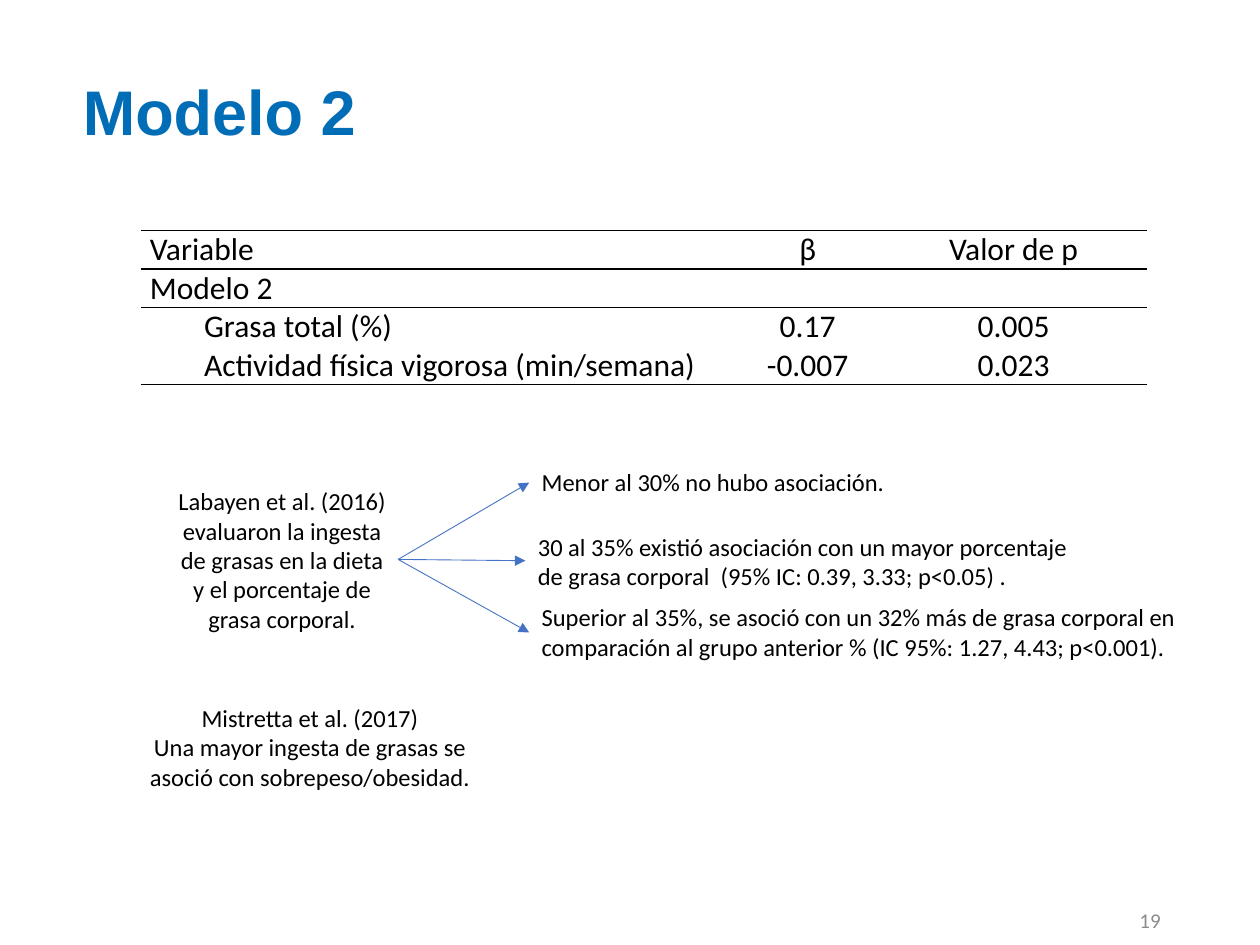
from dataclasses import dataclass, field

import lxml.etree
import pptx
import pptx.dml.color
import pptx.enum.shapes
import pptx.enum.text
import pptx.oxml
import pptx.oxml.ns
import pptx.util

RGB = pptx.dml.color.RGBColor
BLUE = RGB(0x00, 0x6D, 0xB6)
LINE = RGB(0x44, 0x72, 0xC4)
GREY = RGB(0x8C, 0x8C, 0x8C)
BLACK = RGB(0, 0, 0)

ALIGN = pptx.enum.text.PP_ALIGN
MIDDLE = pptx.enum.text.MSO_ANCHOR.MIDDLE
TOP = pptx.enum.text.MSO_ANCHOR.TOP

WIDE = pptx.util.Inches(10)
HIGH = pptx.util.Inches(7.5)
COL = WIDE / 100
ROW = HIGH / 75

BODY = {"name": "Calibri", "size": pptx.util.Pt(14)}
CELL = {"name": "Calibri", "size": pptx.util.Pt(18)}
HEAD = {"name": "Arial", "size": pptx.util.Pt(36), "bold": True}
PAGE = {"name": "Calibri", "size": pptx.util.Pt(12)}


@dataclass
class Note:
    """A text box, placed in grid columns and rows."""
    left: float
    top: float
    width: float
    height: float
    lines: list[str]
    align: ALIGN = ALIGN.LEFT
    anchor: pptx.enum.text.MSO_ANCHOR = TOP
    font: dict = field(default_factory=lambda: BODY)
    color: RGB = BLACK
    space: float = 1.0


NOTES = [
    Note(5.6, 6.5, 85.3, 5.2, ["Modelo 2"], anchor=MIDDLE, font=HEAD,
         color=BLUE, space=0.9),
    Note(9.5, 55.3, 30.2, 8.1,
         ["Mistretta et al. (2017)",
          "Una mayor ingesta de grasas se asoció con sobrepeso/obesidad."],
         ALIGN.CENTER),
    Note(13.1, 38.1, 18.6, 12.8,
         ["Labayen et al. (2016) evaluaron la ingesta de grasas en la dieta "
          "y el porcentaje de grasa corporal."], ALIGN.CENTER),
    Note(42, 36.6, 31.4, 3.4, ["Menor al 30% no hubo asociación."]),
    Note(41.7, 41.7, 46.2, 5.7,
         ["30 al 35% existió asociación con un mayor porcentaje de grasa "
          "corporal  (95% IC: 0.39, 3.33; p<0.05) ."]),
    Note(42, 47.3, 53.7, 5.7,
         ["Superior al 35%, se asoció con un 32% más de grasa corporal en "
          "comparación al grupo anterior % (IC 95%: 1.27, 4.43; p<0.001)."]),
    Note(70.6, 71, 22.5, 4, ["19"], ALIGN.RIGHT, MIDDLE, PAGE, GREY),
]

START = (31.6, 44.4)
TIPS = [(42, 38.3), (41.7, 44.5), (42, 50.2)]

SPANS = [47.1, 11.6, 21.1]
DATA = [
    ["Variable", "β", "Valor de p"],
    ["Modelo 2", "", ""],
    ["Grasa total (%)", "0.17", "0.005"],
    ["Actividad física vigorosa (min/semana)", "-0.007", "0.023"],
]
RULES = {0: ["lnT", "lnB"], 1: ["lnT"], 3: ["lnB"]}
INDENT = {2: "393000", 3: "393000"}
PLAIN = "{2D5ABB26-0587-4C30-8999-92F81FD0307C}"


def cols(count: float) -> int:
    return round(count * COL)


def rows(count: float) -> int:
    return round(count * ROW)


def write(para, text: str, font: dict, color: RGB) -> None:
    run = para.add_run()
    run.text = text
    for key, value in font.items():
        setattr(run.font, key, value)
    run.font.color.rgb = color


def add_note(slide, note: Note) -> None:
    box = slide.shapes.add_textbox(cols(note.left), rows(note.top),
                                   cols(note.width), rows(note.height))
    frame = box.text_frame
    frame.word_wrap = True
    frame.vertical_anchor = note.anchor
    for index, text in enumerate(note.lines):
        para = frame.add_paragraph() if index else frame.paragraphs[0]
        para.alignment = note.align
        para.line_spacing = note.space
        write(para, text, note.font, note.color)


def add_arrow(slide, tip: tuple[float, float]) -> None:
    kind = pptx.enum.shapes.MSO_CONNECTOR.STRAIGHT
    arrow = slide.shapes.add_connector(kind, cols(START[0]), rows(START[1]),
                                       cols(tip[0]), rows(tip[1]))
    arrow.line.color.rgb = LINE
    arrow.line.width = pptx.util.Pt(0.5)
    qn = pptx.oxml.ns.qn
    end = lxml.etree.SubElement(arrow.line._get_or_add_ln(), qn("a:tailEnd"))
    end.set("type", "triangle")
    lxml.etree.SubElement(arrow._element.spPr, qn("a:effectLst"))


def add_rule(cell, side: str) -> None:
    """Draw a thin black border; it must come before the cell's fill."""
    space = pptx.oxml.ns.nsdecls("a")
    rule = pptx.oxml.parse_xml(
        f'<a:{side} {space} w="12700"><a:solidFill>'
        f'<a:srgbClr val="{BLACK}"/></a:solidFill></a:{side}>')
    cell._tc.get_or_add_tcPr().append(rule)


def add_grid(slide) -> None:
    shape = slide.shapes.add_table(len(DATA), len(SPANS), cols(11.2),
                                   rows(18.3), cols(sum(SPANS)), rows(12))
    table = shape.table
    table.first_row = table.horz_banding = False
    table._tbl.tblPr.find(pptx.oxml.ns.qn("a:tableStyleId")).text = PLAIN
    for column, span in zip(table.columns, SPANS):
        column.width = cols(span)
    margins = {"margin_left": cols(0.7), "margin_right": cols(0.7),
               "margin_top": 0, "margin_bottom": 0}
    for y, line in enumerate(DATA):
        table.rows[y].height = rows(3)
        for x, text in enumerate(line):
            cell = table.cell(y, x)
            for key, value in margins.items():
                setattr(cell, key, value)
            for side in RULES.get(y, []):
                add_rule(cell, side)
            cell.fill.background()
            para = cell.text_frame.paragraphs[0]
            para.alignment = ALIGN.CENTER if x else ALIGN.LEFT
            if x == 0 and y in INDENT:
                para._p.get_or_add_pPr().set("marL", INDENT[y])
            if text:
                write(para, text, CELL, BLACK)


def main() -> None:
    deck = pptx.Presentation()
    deck.slide_width, deck.slide_height = WIDE, HIGH
    slide = deck.slides.add_slide(deck.slide_layouts[6])
    add_grid(slide)
    for note in NOTES:
        add_note(slide, note)
    for tip in TIPS:
        add_arrow(slide, tip)
    deck.save("out.pptx")


if __name__ == "__main__":
    main()
